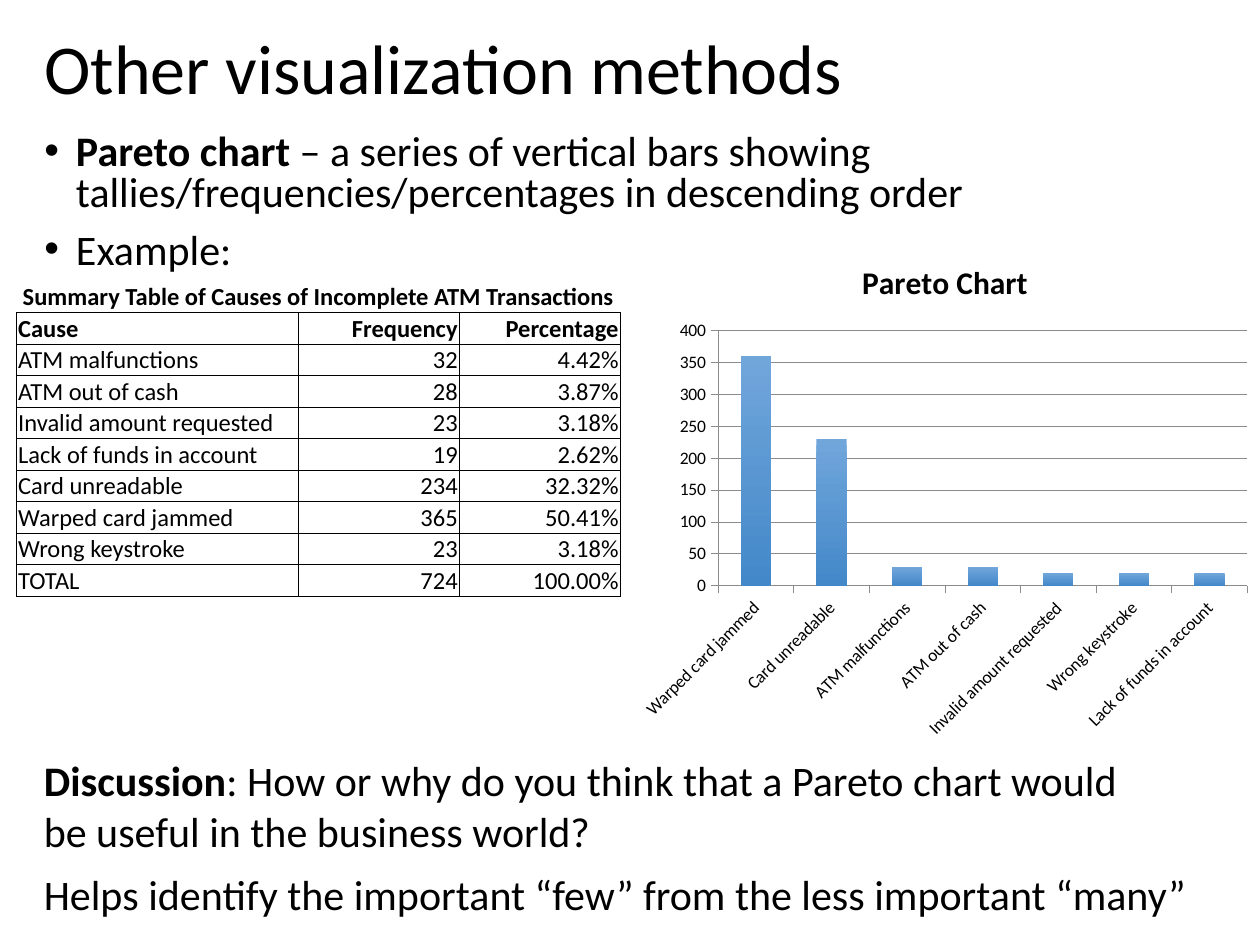
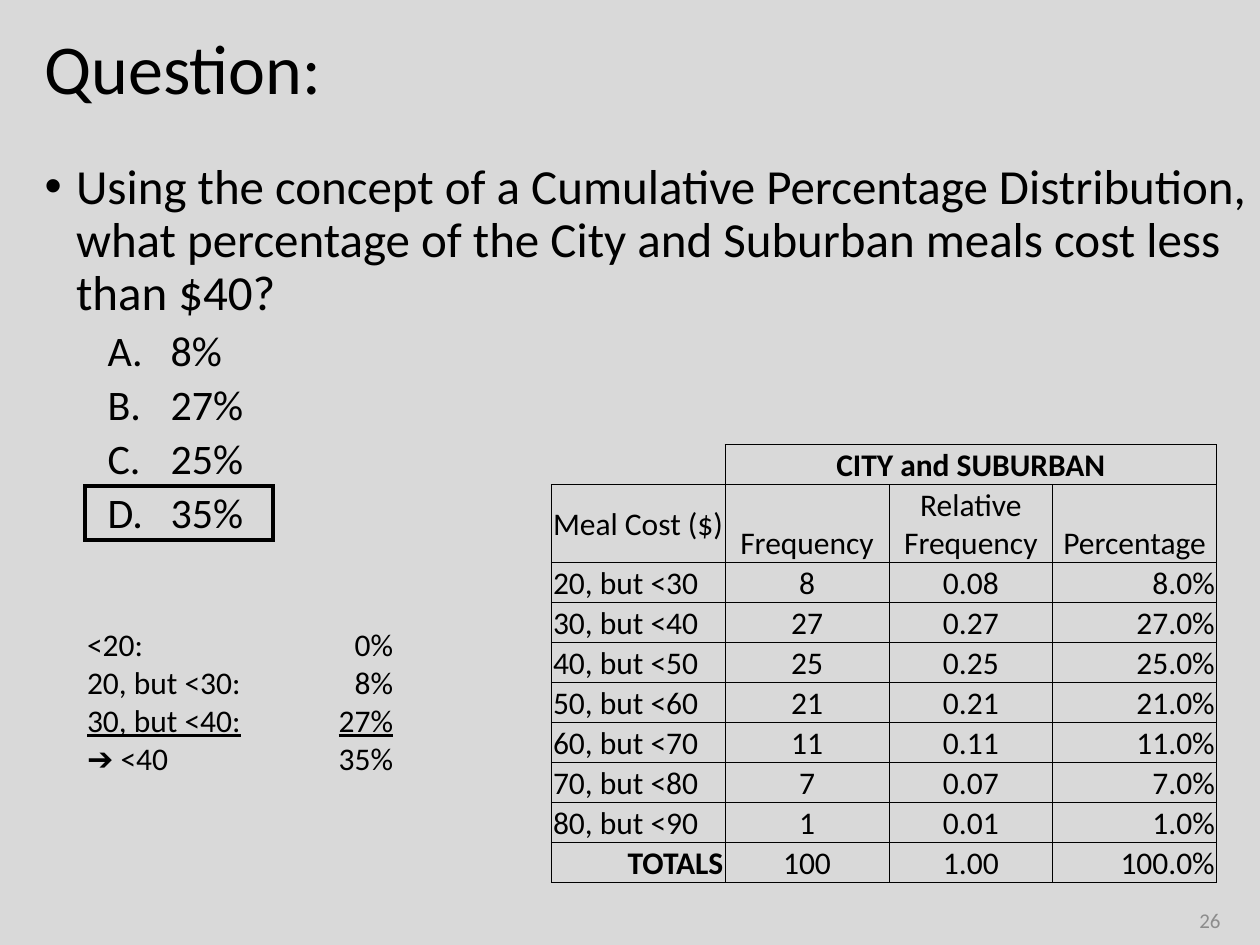
import lxml.etree
import pptx
import pptx.chart.data
import pptx.dml.color
import pptx.enum.chart
import pptx.enum.shapes
import pptx.enum.text
import pptx.oxml
import pptx.oxml.ns
import pptx.util

Pt = pptx.util.Pt
qn = pptx.oxml.ns.qn
LEFT, CENTER, RIGHT = (pptx.enum.text.PP_ALIGN.LEFT, pptx.enum.text.PP_ALIGN.CENTER,
                       pptx.enum.text.PP_ALIGN.RIGHT)
TOP, MIDDLE, BOTTOM = (pptx.enum.text.MSO_ANCHOR.TOP, pptx.enum.text.MSO_ANCHOR.MIDDLE,
                       pptx.enum.text.MSO_ANCHOR.BOTTOM)

# Shared look
FONT = "Calibri"
BLACK = pptx.dml.color.RGBColor(0x00, 0x00, 0x00)
WHITE = pptx.dml.color.RGBColor(0xFF, 0xFF, 0xFF)
LIGHT_GREY = pptx.dml.color.RGBColor(0xD9, 0xD9, 0xD9)
NUMBER_GREY = pptx.dml.color.RGBColor(0x8C, 0x8C, 0x8C)
AXIS_GREY = pptx.dml.color.RGBColor(0x8B, 0x8B, 0x8B)
BAR_TOP = pptx.dml.color.RGBColor(0x71, 0xA6, 0xDB)
BAR_BOTTOM = pptx.dml.color.RGBColor(0x43, 0x88, 0xC9)
PLAIN_TABLE = "{2D5ABB26-0587-4C30-8999-92F81FD0307C}"

deck = pptx.Presentation()
deck.slide_width = pptx.util.Inches(10)
deck.slide_height = pptx.util.Inches(7.5)

# Layout grid: 40 columns by 30 rows
COL = deck.slide_width / 40
ROW = deck.slide_height / 30
MARGIN = 1.02


def write(slide, place, paragraphs, size, spacing=1.0, before=0, anchor=TOP,
          align=LEFT, color=BLACK):
    """Add a text box; each paragraph is a (bold lead, plain rest) pair."""
    x, y, w, h = place
    box = slide.shapes.add_textbox(int(x * COL), int(y * ROW), int(w * COL), int(h * ROW))
    frame = box.text_frame
    frame.word_wrap = True
    frame.vertical_anchor = anchor
    for i, (lead, rest) in enumerate(paragraphs):
        paragraph = frame.paragraphs[0] if i == 0 else frame.add_paragraph()
        paragraph.alignment = align
        paragraph.line_spacing = spacing
        paragraph.space_before = Pt(before)
        paragraph.font.name = FONT
        paragraph.font.size = Pt(size)
        paragraph.font.color.rgb = color
        if lead:
            bold_run = paragraph.add_run()
            bold_run.text = lead
            bold_run.font.bold = True
        if rest:
            paragraph.add_run().text = rest
    return frame


def tabulate(slide, corner, widths, heights, rows, aligns, size, bold, no_border):
    """Add a table with thin black borders except on the no_border cells."""
    frame = slide.shapes.add_table(len(rows), len(widths), int(corner[0] * COL),
                                   int(corner[1] * ROW), int(sum(widths) * COL),
                                   int(sum(heights) * ROW))
    table = frame.table
    table.first_row = table.horz_banding = False
    table._tbl.tblPr.find(qn("a:tableStyleId")).text = PLAIN_TABLE
    for column, width in zip(table.columns, widths):
        column.width = int(width * COL)
    for row, height in zip(table.rows, heights):
        row.height = int(height * ROW)
    for r, texts in enumerate(rows):
        for c, text in enumerate(texts):
            cell = table.cell(r, c)
            cell.margin_left = cell.margin_right = cell.margin_top = Pt(1)
            cell.margin_bottom = 0
            cell.vertical_anchor = BOTTOM
            cell.text = text
            paragraph = cell.text_frame.paragraphs[0]
            paragraph.alignment = aligns[c]
            paragraph.font.name = FONT
            paragraph.font.size = Pt(size)
            paragraph.font.color.rgb = BLACK
            paragraph.font.bold = (r, c) in bold
            if (r, c) not in no_border:
                for side in ("a:lnL", "a:lnR", "a:lnT", "a:lnB"):
                    line = lxml.etree.SubElement(cell._tc.get_or_add_tcPr(), qn(side),
                                                 w=str(Pt(0.5)))
                    paint = lxml.etree.SubElement(line, qn("a:solidFill"))
                    lxml.etree.SubElement(paint, qn("a:srgbClr"), val=str(BLACK))
            cell.fill.background()
    return table


# Backgrounds and titles
slides = []
for title, background in (("Other visualization methods", WHITE), ("Question:", LIGHT_GREY)):
    slide = deck.slides.add_slide(deck.slide_layouts[6])
    slide.background.fill.solid()
    slide.background.fill.fore_color.rgb = background
    write(slide, (MARGIN, 0, 38.12, 4.54), [("", title)], 40, spacing=0.9, anchor=MIDDLE)
    slides.append(slide)
pareto, question = slides

# Body text of both slides
definition = write(pareto, (MARGIN, 4.08, 38.12, 4.96), [
    ("Pareto chart ", "– a series of vertical bars showing "
     "tallies/frequencies/percentages in descending order"),
    ("", "Example:")], 24, spacing=0.8, before=10)
prompt = write(question, (MARGIN, 4.96, 39, 13.8), [
    ("", "Using the concept of a Cumulative Percentage Distribution, what percentage "
     "of the City and Suburban meals cost less than $40?"),
    ("", "8%"), ("", "27%"), ("", "25%"), ("", "35%")], 28, spacing=0.9, before=10)
answers = prompt.paragraphs[1:]
for answer in answers:
    answer.font.size = Pt(24)
    answer.space_before = Pt(5)
    properties = answer._p.get_or_add_pPr()
    properties.set("marL", str(pptx.util.Inches(1)))
    properties.set("indent", str(pptx.util.Inches(-0.5)))
    number = lxml.etree.SubElement(properties, qn("a:buAutoNum"), type="alphaUcPeriod")
    properties.find(qn("a:defRPr")).addprevious(number)
for bulleted in (*definition.paragraphs, prompt.paragraphs[0]):
    properties = bulleted._p.get_or_add_pPr()
    properties.set("marL", str(pptx.util.Inches(0.25)))
    properties.set("indent", str(pptx.util.Inches(-0.25)))
    defaults = properties.find(qn("a:defRPr"))
    for tag, key, value in (("a:buFont", "typeface", "Arial"), ("a:buChar", "char", "•")):
        mark = lxml.etree.SubElement(properties, qn(tag))
        mark.set(key, value)
        defaults.addprevious(mark)

# Slide 1: summary table
causes = [
    ("ATM malfunctions", "32", "4.42%"),
    ("ATM out of cash", "28", "3.87%"),
    ("Invalid amount requested", "23", "3.18%"),
    ("Lack of funds in account", "19", "2.62%"),
    ("Card unreadable", "234", "32.32%"),
    ("Warped card jammed", "365", "50.41%"),
    ("Wrong keystroke", "23", "3.18%"),
]
heading = {(0, c) for c in range(3)}
summary = tabulate(
    pareto, (0.52, 8.92), [8.96, 5.11, 5.11], [1] * 10,
    [("Summary Table of Causes of Incomplete ATM Transactions", "", ""),
     ("Cause", "Frequency", "Percentage"), *causes, ("TOTAL", "724", "100.00%")],
    [LEFT, RIGHT, RIGHT], 14, bold=heading | {(1, c) for c in range(3)}, no_border=heading)
summary.cell(0, 0).merge(summary.cell(0, 2))
summary.cell(0, 0).text_frame.paragraphs[0].alignment = CENTER

# Slide 1: Pareto chart, the causes in descending order, rounded to tens
ranked = sorted(causes, key=lambda cause: -int(cause[1]))
tallies = pptx.chart.data.CategoryChartData()
tallies.categories = [cause[0] for cause in ranked]
tallies.add_series("Series 1", [round(int(cause[1]), -1) for cause in ranked])
chart = pareto.shapes.add_chart(
    pptx.enum.chart.XL_CHART_TYPE.COLUMN_CLUSTERED, int(20 * COL), int(7.56 * ROW),
    int(20 * COL), int(16.24 * ROW), tallies).chart
chart.font.name = FONT
chart.font.size = Pt(10)
chart.font.color.rgb = BLACK
chart.has_legend = False
chart.has_title = True
chart.chart_title.include_in_layout = False
chart.chart_title.text_frame.text = "Pareto Chart"
chart_heading = chart.chart_title.text_frame.paragraphs[0].font
chart_heading.name = FONT
chart_heading.size = Pt(18)
chart_heading.bold = True
chart_heading.color.rgb = BLACK

plot = chart.plots[0]
plot.gap_width = 150
plot.vary_by_categories = False
bars = plot.series[0].format.fill
bars.gradient()
bars.gradient_angle = 270
for stop, color, position in zip(bars.gradient_stops, (BAR_TOP, BAR_BOTTOM), (0, 1)):
    stop.color.rgb = color
    stop.position = position

frequency_axis = chart.value_axis
frequency_axis.minimum_scale, frequency_axis.maximum_scale = 0, 400
frequency_axis.major_unit = 50
for line in (frequency_axis.major_gridlines.format.line, frequency_axis.format.line,
             chart.category_axis.format.line):
    line.color.rgb = AXIS_GREY
    line.width = Pt(0.5)
for axis in (frequency_axis, chart.category_axis):
    axis.major_tick_mark = pptx.enum.chart.XL_TICK_MARK.OUTSIDE
    axis.tick_labels.font.size = Pt(10)
slanted = chart.category_axis._element.find(qn("c:txPr")).find(qn("a:bodyPr"))
slanted.set("rot", "-2700000")

# Plot area as shares of the chart
plot_area = chart._chartSpace.chart.plotArea
for old_layout in plot_area.findall(qn("c:layout")):
    plot_area.remove(old_layout)
layout = lxml.etree.Element(qn("c:layout"))
manual = lxml.etree.SubElement(layout, qn("c:manualLayout"))
for tag, value in (("layoutTarget", "inner"), ("xMode", "edge"), ("yMode", "edge"),
                   ("x", "0.14"), ("y", "0.18"), ("w", "0.84"), ("h", "0.5")):
    lxml.etree.SubElement(manual, qn("c:" + tag), val=value)
plot_area.insert(0, layout)

# Slide 1: discussion
write(pareto, (1, 23.76, 35.84, 3.64), [
    ("Discussion", ": How or why do you think that a Pareto chart would be useful "
     "in the business world?")], 24)
write(pareto, (1, 27.36, 38.16, 2), [
    ("", "Helps identify the important “few” from the less important “many”")], 24)

# Slide 2: slide number
write(question, (30.14, 28.4, 9, 1.6), [("", "26")], 12, anchor=MIDDLE, align=RIGHT,
      color=NUMBER_GREY)

# Slide 2: meal costs; each bracket is 10 wide and the counts add up to 100
counts = [8, 27, 25, 21, 11, 7, 1]
brackets = [(f"{low}, but <{low + 10}", str(n), f"{n / 100:.2f}", f"{n:.1f}%")
            for low, n in zip(range(20, 90, 10), counts)]
meals = tabulate(
    question, (17.5, 14.12), [5.52, 5.2, 5.2, 5.2], [1.27, 2.48] + [1.27] * 8,
    [("", "CITY and SUBURBAN", "", ""),
     ("Meal Cost ($)", "Frequency", "Relative Frequency", "Percentage"),
     *brackets, ("TOTALS", "100", "1.00", "100.0%")],
    [LEFT, CENTER, CENTER, RIGHT], 18, bold={(0, 1), (9, 0)}, no_border={(0, 0)})
meals.cell(0, 1).merge(meals.cell(0, 3))
meals.cell(0, 1).text_frame.paragraphs[0].alignment = CENTER
meals.cell(1, 0).vertical_anchor = MIDDLE
meals.cell(1, 3).text_frame.paragraphs[0].alignment = CENTER
meals.cell(9, 0).text_frame.paragraphs[0].alignment = RIGHT

# Slide 2: frame with sharp corners around the right answer
answer_frame = question.shapes.add_shape(
    pptx.enum.shapes.MSO_SHAPE.RECTANGLE, int(2.7 * COL), int(15.44 * ROW),
    int(5.96 * COL), int(1.72 * ROW))
answer_frame.shadow.inherit = False
answer_frame.fill.background()
answer_frame.line.color.rgb = BLACK
answer_frame.line.width = Pt(2.25)
lxml.etree.SubElement(answer_frame.line._get_or_add_ln(), qn("a:miter"), lim="800000")

# Slide 2: cumulative sum, percentages on a right tab
running_total = write(question, (2.37, 19.66, 10.64, 5.24), [("", "")] * 4, 18)
sums = [("<20:", "0%"), ("20, but <30:", "8%"), ("30, but <40:", "27%"), ("➔ <40", "35%")]
for paragraph, (label, share) in zip(running_total.paragraphs, sums):
    for text in (label, "\t", share):
        run = paragraph.add_run()
        run.text = text
        run.font.underline = share == "27%" and text != "\t"
    properties = paragraph._p.get_or_add_pPr()
    tabs = lxml.etree.SubElement(properties, qn("a:tabLst"))
    lxml.etree.SubElement(tabs, qn("a:tab"), pos=str(pptx.util.Inches(2.43)), algn="r")
    properties.find(qn("a:defRPr")).addprevious(tabs)

deck.save("out.pptx")
